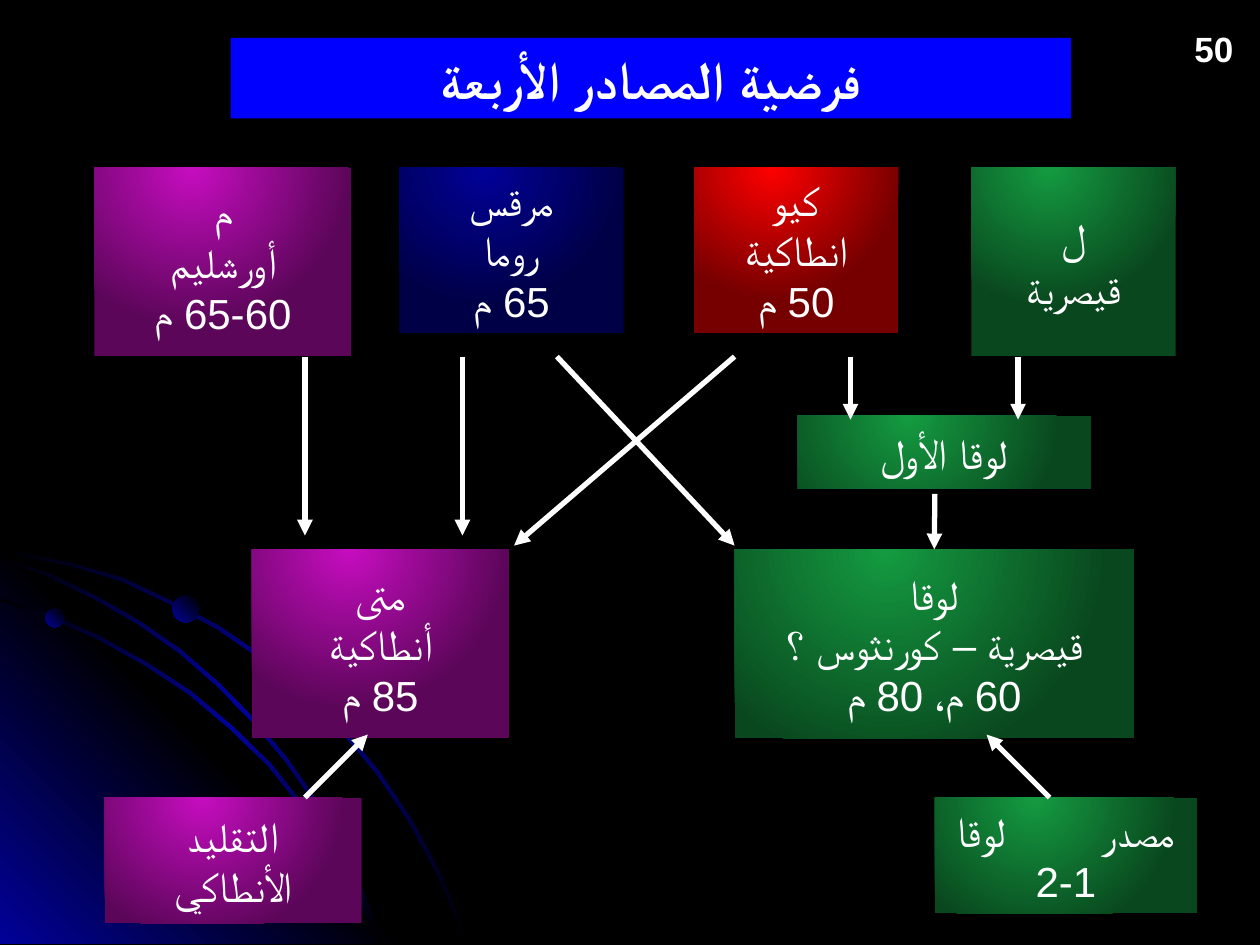
from lxml.etree import SubElement
from pptx import Presentation
from pptx.dml.color import RGBColor
from pptx.enum.shapes import MSO_CONNECTOR, MSO_SHAPE
from pptx.enum.text import MSO_ANCHOR, PP_ALIGN
from pptx.oxml.ns import qn
from pptx.util import Inches, Pt

COLORS = {
    "black": "000000", "white": "FFFFFF", "title": "0000FF", "navy": "010199",
    "dark navy": "000047", "red": "FF0000", "dark red": "760000",
    "purple": "C60DC0", "dark purple": "5C0659",
    "green": "149B41", "dark green": "09481E",
}
BOTTOM = 7.49
STRIP = 0.02

# Upper edges of the three decorative arcs
ARCS = {
    "outer": [(0, 4.35), (0.28, 4.41), (0.57, 4.47), (0.98, 4.59), (1.36, 4.77), (1.74, 4.97),
              (2.09, 5.21), (2.42, 5.48), (2.72, 5.78), (3, 6.11), (3.25, 6.48), (3.39, 6.73),
              (3.52, 6.98), (3.62, 7.23), (3.72, BOTTOM)],
    "inner": [(0, 4.75), (0.41, 4.88), (0.79, 5.05), (1.17, 5.26), (1.52, 5.49), (1.84, 5.76),
              (2.15, 6.06), (2.42, 6.4), (2.66, 6.76), (2.86, 7.12), (2.96, 7.3), (3.03, BOTTOM)],
    "middle": [(0, 4.42), (0.39, 4.55), (0.76, 4.73), (1.11, 4.93), (1.44, 5.16), (1.75, 5.43),
               (2.04, 5.73), (2.29, 6.03), (2.54, 6.39), (2.69, 6.65), (2.82, 6.93),
               (2.94, 7.2), (3.03, BOTTOM)],
}
WEDGE = [(0, 4.27), (3.22, BOTTOM), (0, BOTTOM)]
PLANETS = [(0.36, 4.83, 0.15, 315), (2.67, 6.74, 0.16, 45), (1.37, 4.73, 0.21, 315)]

# name: (left, top, width, height, colour, text)
BOXES = {
    "Q": (5.51, 1.33, 1.62, 1.31, "red", "كيو\vانطاكية\n50 م"),
    "Mark": (3.17, 1.33, 1.78, 1.31, "navy", "مرقس\vروما\v65 م"),
    "M": (0.75, 1.33, 2.04, 1.5, "purple", "م\vأورشليم\v60-65 م"),
    "L": (7.71, 1.33, 1.62, 1.5, "green", "ل\vقيصرية"),
    "Matthew": (2, 4.36, 2.04, 1.5, "purple", "متى\vأنطاكية\v85 م"),
    "Luke": (5.83, 4.36, 3.17, 1.5, "green", "لوقا\vقيصرية – كورنثوس ؟\v60 م، 80 م"),
    "Proto-Luke": (6.33, 3.3, 2.33, 0.58, "green", "لوقا الأول"),
    "Luke 1-2 source": (7.42, 6.33, 2.08, 0.92, "green", ""),
    "Antioch tradition": (0.83, 6.33, 2.04, 1, "purple", "التقليد\vالأنطاكي"),
}
ARROWS = [
    (3.67, 2.83, 3.67, 4.25), (6.75, 2.83, 6.75, 3.33), (4.42, 2.83, 5.83, 4.33),
    (5.83, 2.83, 4.08, 4.33), (8.08, 2.83, 8.08, 3.33), (2.42, 2.83, 2.42, 4.25),
    (2.42, 6.33, 2.92, 5.83), (8.33, 6.33, 7.83, 5.83),
]


def rgb(name):
    return RGBColor.from_string(COLORS[name])


class SlideBuilder:
    def __init__(self, slide):
        self.slide = slide
        self.font = "Arial"
        self.text_size = 24
        slide.background.fill.solid()
        slide.background.fill.fore_color.rgb = rgb("black")

    def gradient(self, shape, names, angle=None):
        """Linear at a clockwise angle, or radial from above the top edge without one."""
        shape.shadow.inherit = False
        shape.line.fill.background()
        shape.fill.gradient()
        fill = shape._element.spPr.find(qn("a:gradFill"))
        for child in list(fill):
            fill.remove(child)
        stops = SubElement(fill, qn("a:gsLst"))
        for index, name in enumerate(names):
            position = index * 100000 // (len(names) - 1)
            stop = SubElement(stops, qn("a:gs"), pos=str(position))
            SubElement(stop, qn("a:srgbClr"), val=COLORS[name])
        if angle is None:
            circle = SubElement(fill, qn("a:path"), path="circle")
            SubElement(circle, qn("a:fillToRect"), l="38000", t="-20000", r="62000", b="120000")
        else:
            SubElement(fill, qn("a:lin"), ang=str(angle * 60000), scaled="1")

    def outline(self, points, names, angle):
        corners = [(Inches(x), Inches(y)) for x, y in points]
        builder = self.slide.shapes.build_freeform(*corners[0])
        builder.add_line_segments(corners[1:], close=True)
        self.gradient(builder.convert_to_shape(), names, angle)

    def arc(self, edge):
        lower = [(max(x - STRIP, 0), min(y + STRIP, BOTTOM)) for x, y in reversed(edge)]
        self.outline(edge + lower, ["black", "navy", "black"], 45)

    def shape(self, kind, left, top, width, height):
        return self.slide.shapes.add_shape(
            kind, Inches(left), Inches(top), Inches(width), Inches(height))

    def planet(self, left, top, size, angle):
        planet = self.shape(MSO_SHAPE.OVAL, left, top, size, size)
        self.gradient(planet, ["navy", "black"], angle)

    def frame(self, shape, wrap=True):
        frame = shape.text_frame
        frame.word_wrap = wrap
        frame.margin_left = frame.margin_right = Inches(0.05)
        frame.margin_top = frame.margin_bottom = Inches(0.05)
        return frame

    def format(self, frame, size, bold=False, centred=True, right_to_left=True):
        for paragraph in frame.paragraphs:
            paragraph.alignment = PP_ALIGN.CENTER if centred else PP_ALIGN.LEFT
            if right_to_left:
                paragraph._p.get_or_add_pPr().set("rtl", "1")
            for run in paragraph.runs:
                run.font.name = self.font
                run.font.size = Pt(size)
                run.font.bold = bold
                run.font.color.rgb = rgb("white")
                SubElement(run._r.get_or_add_rPr(), qn("a:cs"), typeface=self.font)

    def box(self, left, top, width, height, color, text):
        box = self.shape(MSO_SHAPE.RECTANGLE, left, top, width, height)
        self.gradient(box, [color, "dark " + color])
        frame = self.frame(box)
        frame.vertical_anchor = MSO_ANCHOR.MIDDLE
        frame.text = text
        self.format(frame, self.text_size)
        return box

    def spaced_words(self, box, first, second, last_line, gap):
        """Two words on one line, the space between them widened by gap points."""
        paragraph = box.text_frame.paragraphs[0]
        runs = []
        for text in (first, " ", second):
            run = paragraph.add_run()
            run.text = text
            runs.append(run)
        paragraph.add_line_break()
        paragraph.add_run().text = last_line
        runs[1]._r.get_or_add_rPr().set("spc", str(gap * 100))
        self.format(box.text_frame, self.text_size)

    def title(self, text):
        title = self.shape(MSO_SHAPE.RECTANGLE, 1.83, 0.3, 6.67, 0.64)
        title.shadow.inherit = False
        title.fill.solid()
        title.fill.fore_color.rgb = rgb("title")
        title.line.fill.background()
        frame = self.frame(title)
        frame.vertical_anchor = MSO_ANCHOR.MIDDLE
        frame.text = text
        self.format(frame, 30.4, bold=True, right_to_left=False)

    def page_number(self, text):
        number = self.slide.shapes.add_textbox(
            Inches(9.43), Inches(0.17), Inches(0.42), Inches(0.44))
        frame = self.frame(number, wrap=False)
        frame.text = text
        self.format(frame, 20, bold=True, centred=False, right_to_left=False)

    def arrow(self, *ends):
        arrow = self.slide.shapes.add_connector(
            MSO_CONNECTOR.STRAIGHT, *[Inches(value) for value in ends])
        arrow.line.color.rgb = rgb("white")
        arrow.line.width = Pt(3)
        SubElement(arrow.line._get_or_add_ln(), qn("a:tailEnd"), type="triangle")
        SubElement(arrow._element.spPr, qn("a:effectLst"))
        return arrow


def main():
    presentation = Presentation()
    presentation.slide_width, presentation.slide_height = Inches(10), Inches(7.5)
    builder = SlideBuilder(presentation.slides.add_slide(presentation.slide_layouts[6]))
    builder.arc(ARCS["outer"])
    builder.outline(WEDGE, ["navy", "black", "navy"], 315)
    builder.arc(ARCS["inner"])
    builder.arc(ARCS["middle"])
    for planet in PLANETS:
        builder.planet(*planet)
    builder.page_number("50")
    builder.title("فرضية المصادر الأربعة")
    boxes = {name: builder.box(*values) for name, values in BOXES.items()}
    builder.spaced_words(boxes["Luke 1-2 source"], "مصدر", "لوقا", "1-2", gap=48)
    for ends in ARROWS:
        builder.arrow(*ends)
    builder.arrow(7.42, 3.92, 7.42, 4.36).end_connect(boxes["Luke"], 0)
    presentation.save("out.pptx")


if __name__ == "__main__":
    main()
